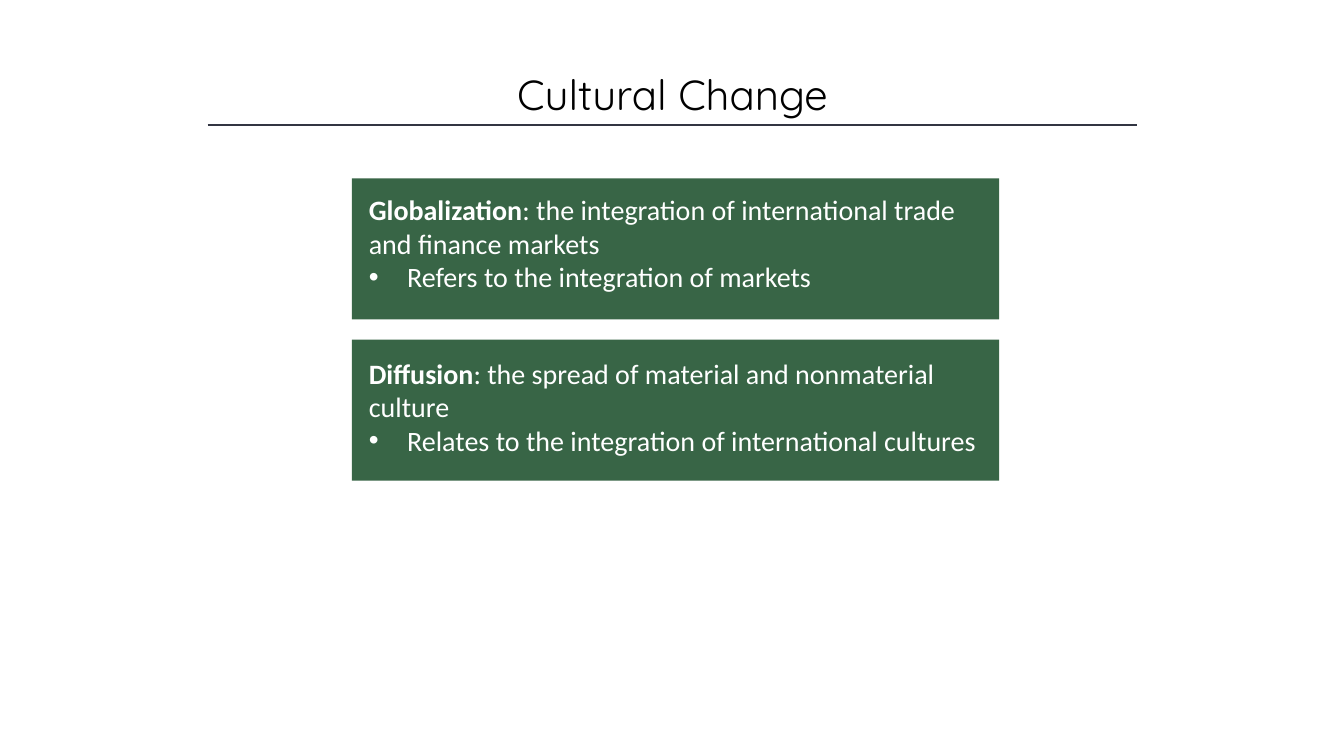
import dataclasses

import pptx
import pptx.dml.color
import pptx.enum.shapes
import pptx.enum.text
import pptx.oxml.ns
import pptx.presentation
import pptx.shapes.autoshape
import pptx.slide
import pptx.util
from lxml import etree

Inches = pptx.util.Inches
Pt = pptx.util.Pt
ALIGN = pptx.enum.text.PP_ALIGN
ANCHOR = pptx.enum.text.MSO_ANCHOR

GREEN = "386546"
WHITE = "FFFFFF"
LEFT, TOP = 3.49, 1.77
WIDTH, HEIGHT, STEP = 6.42, 1.4, 1.6


@dataclasses.dataclass
class Card:
    term: str
    meaning: str
    point: str
    box: tuple[float, float, float, float]


CARDS = [
    Card("Globalization", ": the integration of international trade and finance markets",
         "Refers to the integration of markets", (3.56, 1.97, 6.2, 0.88)),
    Card("Diffusion", ": the spread of material and nonmaterial culture",
         "Relates to the integration of international cultures", (3.56, 3.46, 6.3, 1.15)),
]


def color(code: str) -> pptx.dml.color.RGBColor:
    return pptx.dml.color.RGBColor.from_string(code)


def write(para, text: str, *, size: float = 20, font: str = "Calibri",
          fill: str = WHITE, bold: bool = False, align=ALIGN.LEFT) -> None:
    """Add one formatted run to a paragraph."""
    para.alignment = align
    run = para.add_run()
    run.text = text
    run.font.size = Pt(size)
    run.font.name = font
    run.font.bold = bold
    run.font.color.rgb = color(fill)


def bullet(para) -> None:
    props = para._p.get_or_add_pPr()
    props.set("marL", str(Inches(0.38)))
    props.set("indent", str(Inches(-0.38)))
    etree.SubElement(props, pptx.oxml.ns.qn("a:buFont"), typeface="Arial")
    etree.SubElement(props, pptx.oxml.ns.qn("a:buChar"), char="•")


def block(slide: pptx.slide.Slide, left: float, top: float, width: float,
          height: float) -> pptx.shapes.autoshape.Shape:
    """Draw a plain green rectangle."""
    shape = slide.shapes.add_shape(
        pptx.enum.shapes.MSO_SHAPE.RECTANGLE,
        Inches(left), Inches(top), Inches(width), Inches(height))
    shape.shadow.inherit = False
    shape.fill.solid()
    shape.fill.fore_color.rgb = color(GREEN)
    shape.line.fill.background()
    return shape


def draw_card(slide: pptx.slide.Slide, card: Card, top: float) -> None:
    block(slide, LEFT, top, WIDTH, HEIGHT)
    frame = block(slide, *card.box).text_frame
    frame.word_wrap = True
    frame.vertical_anchor = ANCHOR.MIDDLE
    head = frame.paragraphs[0]
    write(head, card.term, bold=True)
    write(head, card.meaning)
    item = frame.add_paragraph()
    bullet(item)
    write(item, card.point)


def draw_title(slide: pptx.slide.Slide) -> None:
    title = slide.shapes.title
    title.left, title.top = Inches(1.67), Inches(0.63)
    title.width, title.height = Inches(10), Inches(0.61)
    frame = title.text_frame
    frame.word_wrap = True
    frame.auto_size = pptx.enum.text.MSO_AUTO_SIZE.NONE
    frame.vertical_anchor = ANCHOR.TOP
    write(frame.paragraphs[0], "Cultural Change", size=30,
          font="Quicksand", fill="000000", align=ALIGN.CENTER)

    rule = slide.shapes.add_connector(
        pptx.enum.shapes.MSO_CONNECTOR.STRAIGHT,
        Inches(2.06), Inches(1.24), Inches(11.28), Inches(1.24))
    rule.line.color.rgb = color("323542")
    rule.line.width = Pt(1)
    etree.SubElement(rule._element.spPr, pptx.oxml.ns.qn("a:effectLst"))


def main() -> None:
    deck = pptx.Presentation()
    deck.slide_width, deck.slide_height = Inches(13.33), Inches(7.5)
    slide = deck.slides.add_slide(deck.slide_layouts[5])
    draw_title(slide)
    for row, card in enumerate(CARDS):
        draw_card(slide, card, TOP + row * STEP)
    deck.save("out.pptx")


if __name__ == "__main__":
    main()
